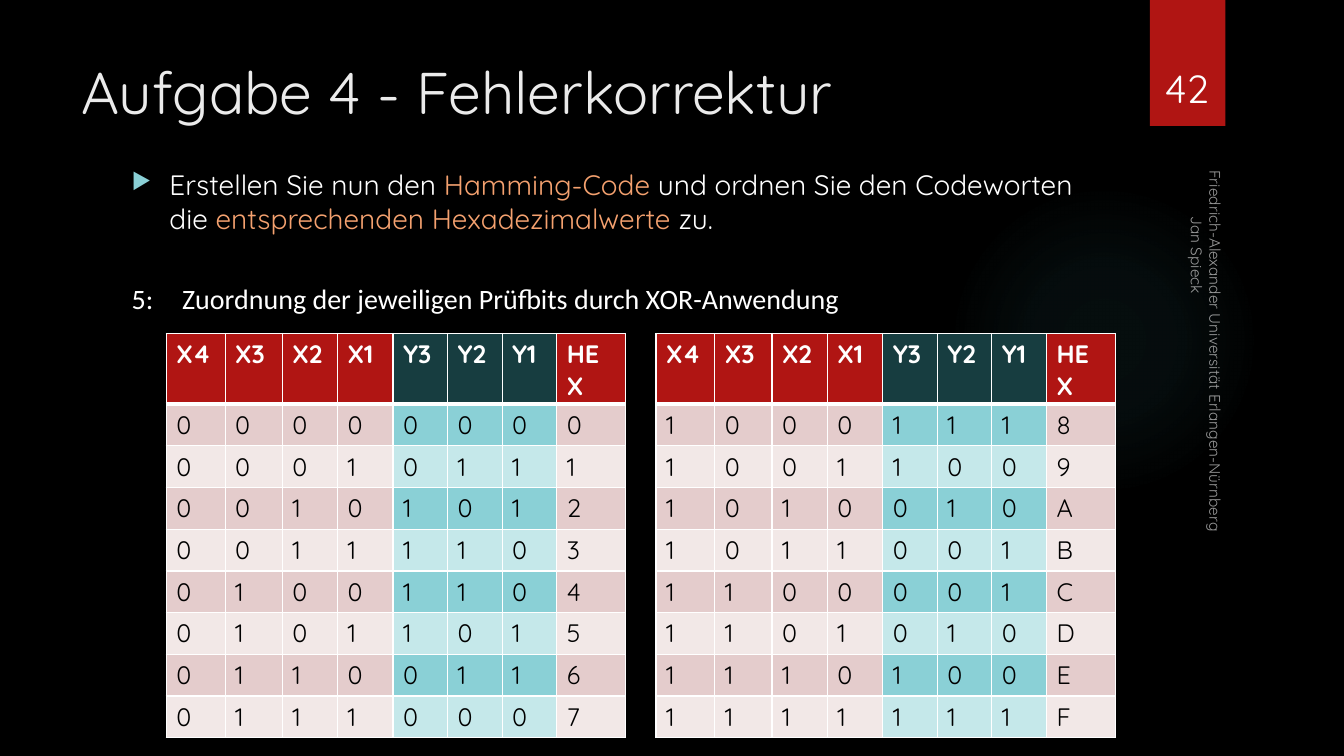
import dataclasses
from typing import Optional

import lxml.etree
import pptx
import pptx.dml.color
import pptx.enum.shapes
import pptx.enum.text
import pptx.oxml
import pptx.oxml.ns
import pptx.util

RGBColor = pptx.dml.color.RGBColor
BLACK = RGBColor(0x00, 0x00, 0x00)
WHITE = RGBColor(0xFF, 0xFF, 0xFF)
TITLE_GREY = RGBColor(0xEB, 0xEB, 0xEB)
RED = RGBColor(0xB0, 0x15, 0x13)
ORANGE = RGBColor(0xF4, 0xA1, 0x6F)
GLOW = RGBColor(0x50, 0xB9, 0xC1)
TEAL_DARK = RGBColor(0x17, 0x3D, 0x40)
TEAL = RGBColor(0x8A, 0xD0, 0xD6)
TEAL_LIGHT = RGBColor(0xC5, 0xE8, 0xEA)
ROSE = RGBColor(0xE4, 0xCC, 0xCC)
ROSE_LIGHT = RGBColor(0xF2, 0xE8, 0xE7)

# Grid of 160 columns and 90 rows
SLIDE_W, SLIDE_H = pptx.util.Inches(13.333), pptx.util.Inches(7.5)
COLUMN, ROW = SLIDE_W / 160, SLIDE_H / 90


@dataclasses.dataclass
class Area:
    left: float
    top: float
    width: float
    height: float

    def lengths(self) -> tuple[int, int, int, int]:
        return (round(self.left * COLUMN), round(self.top * ROW),
                round(self.width * COLUMN), round(self.height * ROW))


@dataclasses.dataclass
class CodeTable:
    left: float
    first_value: int


HEADINGS = ["X4", "X3", "X2", "X1", "Y3", "Y2", "Y1", "HEX"]
COLUMN_WIDTHS = [7, 6.8, 6.6, 6.6, 6.5, 6.5, 6.5, 8.2]
CHECK_COLUMNS = range(4, 7)
CODES_PER_TABLE = 8
HEADING_HEIGHT, CODE_HEIGHT = 5.3, 4.97
TABLE_TOP = 39.7
CODE_TABLES = [CodeTable(19.8, 0), CodeTable(78.1, 8)]
# Check bits Y3 Y2 Y1 that each data bit toggles
CHECK_MASKS = {1: 0b011, 2: 0b101, 4: 0b110, 8: 0b111}


def drawing_xml(xml: str) -> lxml.etree.ElementBase:
    return pptx.oxml.parse_xml(xml.replace(">", f" {pptx.oxml.ns.nsdecls('a')}>", 1))


def add_text(paragraph, text: str, *, size: float, color: RGBColor = WHITE,
             font: str = "Quicksand", bold: bool = False,
             opacity: Optional[int] = None) -> None:
    run = paragraph.add_run()
    run.text = text
    run.font.size = pptx.util.Pt(size)
    run.font.name = font
    run.font.bold = bold
    run.font.color.rgb = color
    if opacity is not None:
        rgb = run.font.fill._xPr.find(".//" + pptx.oxml.ns.qn("a:srgbClr"))
        rgb.append(drawing_xml(f'<a:alpha val="{opacity * 1000}"></a:alpha>'))


def add_frame(slide, area: Area, anchor=pptx.enum.text.MSO_ANCHOR.TOP, rotation: float = 0):
    box = slide.shapes.add_textbox(*area.lengths())
    box.rotation = rotation
    box.text_frame.word_wrap = True
    box.text_frame.vertical_anchor = anchor
    return box.text_frame


def set_indent(paragraph, left: float, first: float) -> None:
    properties = paragraph._p.get_or_add_pPr()
    properties.set("marL", str(round(left * COLUMN)))
    properties.set("indent", str(round(first * COLUMN)))


def add_plain_shape(slide, kind, area: Area, color: RGBColor):
    shape = slide.shapes.add_shape(kind, *area.lengths())
    shape.shadow.inherit = False
    shape.fill.solid()
    shape.fill.fore_color.rgb = color
    shape.line.fill.background()
    return shape


def add_glow(slide, area: Area) -> None:
    glow = add_plain_shape(slide, pptx.enum.shapes.MSO_SHAPE.OVAL, area, GLOW)
    stops = "".join(
        f'<a:gs pos="{position * 1000}"><a:srgbClr val="{GLOW}">'
        f'<a:alpha val="{opacity * 1000}"/></a:srgbClr></a:gs>'
        for position, opacity in [(0, 7), (36, 6), (69, 0), (100, 0)])
    gradient = drawing_xml(
        f'<a:gradFill><a:gsLst>{stops}</a:gsLst><a:path path="circle">'
        '<a:fillToRect l="50000" t="50000" r="50000" b="50000"/></a:path></a:gradFill>')
    properties = glow._element.spPr
    properties.replace(properties.find(pptx.oxml.ns.qn("a:solidFill")), gradient)


def set_borders(cell, top: float, bottom: float) -> None:
    widths = {"L": 1, "R": 1, "T": top, "B": bottom}
    properties = cell._tc.get_or_add_tcPr()
    for position, (side, width) in enumerate(widths.items()):
        properties.insert(position, drawing_xml(
            f'<a:ln{side} w="{pptx.util.Pt(width)}"><a:solidFill>'
            f'<a:srgbClr val="{WHITE}"/></a:solidFill></a:ln{side}>'))


def code_row(value: int) -> list[str]:
    check = 0
    for data_bit, mask in CHECK_MASKS.items():
        if value & data_bit:
            check ^= mask
    return [*f"{value:04b}{check:03b}", f"{value:X}"]


def cell_color(row: int, column: int) -> RGBColor:
    is_check = column in CHECK_COLUMNS
    if row == 0:
        return TEAL_DARK if is_check else RED
    if row % 2:
        return TEAL if is_check else ROSE
    return TEAL_LIGHT if is_check else ROSE_LIGHT


def add_code_table(slide, codes: CodeTable) -> None:
    values = range(codes.first_value, codes.first_value + CODES_PER_TABLE)
    rows = [HEADINGS] + [code_row(value) for value in values]
    area = Area(codes.left, TABLE_TOP, sum(COLUMN_WIDTHS),
                HEADING_HEIGHT + CODES_PER_TABLE * CODE_HEIGHT)
    table = slide.shapes.add_table(len(rows), len(HEADINGS), *area.lengths()).table
    for column, width in zip(table.columns, COLUMN_WIDTHS):
        column.width = round(width * COLUMN)
    for r, texts in enumerate(rows):
        is_heading = r == 0
        table.rows[r].height = round((HEADING_HEIGHT if is_heading else CODE_HEIGHT) * ROW)
        for c, text in enumerate(texts):
            cell = table.cell(r, c)
            cell.fill.solid()
            cell.fill.fore_color.rgb = cell_color(r, c)
            set_borders(cell, top=3 if r == 1 else 1, bottom=3 if is_heading else 1)
            add_text(cell.text_frame.paragraphs[0], text, size=18,
                     color=WHITE if is_heading else BLACK, bold=is_heading)


def add_task(slide) -> None:
    frame = add_frame(slide, Area(14.5, 19.4, 117.4, 20))
    task = frame.paragraphs[0]
    set_indent(task, 4.5, -4.5)
    for xml in (f'<a:buClr><a:srgbClr val="{TEAL}"/></a:buClr>',
                '<a:buSzPct val="80000"></a:buSzPct>',
                '<a:buChar char="▶"></a:buChar>'):
        task._p.get_or_add_pPr().append(drawing_xml(xml))
    for text, color in [("Erstellen Sie nun den ", WHITE),
                        ("Hamming-Code", ORANGE),
                        (" und ordnen Sie den Codeworten die ", WHITE),
                        ("entsprechenden Hexadezimalwerte", ORANGE),
                        (" zu.", WHITE)]:
        add_text(task, text, size=20, color=color)
    step = frame.add_paragraph()
    set_indent(step, 6, -6)
    step.space_before = pptx.util.Pt(33)
    add_text(step, "5:\tZuordnung der jeweiligen Prüfbits durch XOR-Anwendung",
             size=20, font="Calibri")


def main() -> None:
    presentation = pptx.Presentation()
    presentation.slide_width, presentation.slide_height = SLIDE_W, SLIDE_H
    slide = presentation.slides.add_slide(presentation.slide_layouts[6])
    bottom = pptx.enum.text.MSO_ANCHOR.BOTTOM

    # Backdrop
    slide.background.fill.solid()
    slide.background.fill.fore_color.rgb = BLACK
    add_glow(slide, Area(112.9, 22, 37, 37))
    add_plain_shape(slide, pptx.enum.shapes.MSO_SHAPE.RECTANGLE, Area(136.9, 0, 9, 15), RED)

    # Title and task
    title = add_frame(slide, Area(8.5, 6, 123.5, 18.4)).paragraphs[0]
    add_text(title, "Aufgabe 4 - Fehlerkorrektur", size=42, color=TITLE_GREY)
    add_task(slide)

    # Footer along the right edge
    footer = add_frame(slide, Area(117.5, 42.4, 50.6, 4), bottom, rotation=90)
    add_text(footer.paragraphs[0], "Friedrich-Alexander Universität Erlangen-Nürnberg",
             size=11, opacity=60)
    author = footer.add_paragraph()
    set_indent(author, 5.5, 0)
    add_text(author, "Jan Spieck", size=11, opacity=60)

    # Page number
    page_number = add_frame(slide, Area(135.8, 3.8, 11, 10.1), bottom).paragraphs[0]
    page_number.alignment = pptx.enum.text.PP_ALIGN.CENTER
    add_text(page_number, "42", size=28)

    # Code tables
    for codes in CODE_TABLES:
        add_code_table(slide, codes)

    presentation.save("out.pptx")


if __name__ == "__main__":
    main()
